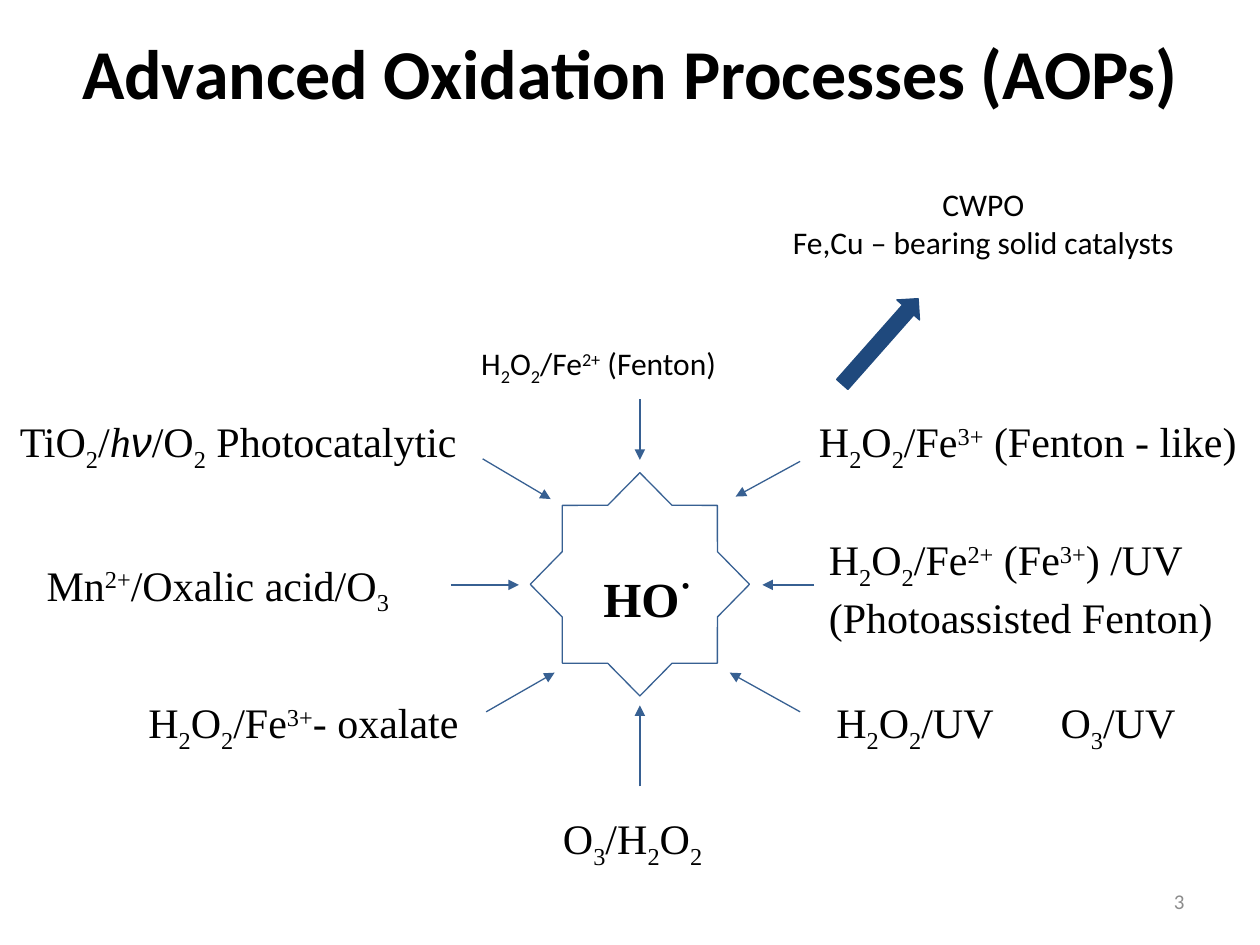
from dataclasses import dataclass

from lxml.etree import SubElement
from pptx import Presentation
from pptx.dml.color import RGBColor
from pptx.enum.shapes import MSO_CONNECTOR, MSO_SHAPE
from pptx.enum.text import MSO_ANCHOR, PP_ALIGN
from pptx.oxml.ns import qn
from pptx.util import Cm, Pt


@dataclass(frozen=True)
class Theme:
    ink: RGBColor = RGBColor(0x00, 0x00, 0x00)
    outline: RGBColor = RGBColor(0x37, 0x60, 0x92)
    accent: RGBColor = RGBColor(0x1F, 0x49, 0x7D)
    muted: RGBColor = RGBColor(0x8C, 0x8C, 0x8C)
    sans: str = "Calibri"
    serif: str = "Times New Roman"
    greek: str = "Arial"
    title: int = 40
    dot: int = 36
    radical: int = 28
    formula: int = 24
    note: int = 18
    number: int = 12
    line: float = 0.75


# Paired marks in a formula: _subscript_, ^superscript^, ~italic~, #Greek italic#
MARKS = "_^~#"
BASELINES = {"_": "-25000", "^": "30000"}


def split_formula(formula):
    """Yield (text, mark) pieces of a marked-up formula."""
    piece, active = "", ""
    for letter in formula:
        if letter in MARKS:
            if piece:
                yield piece, active
            piece, active = "", "" if active == letter else letter
        else:
            piece += letter
    if piece:
        yield piece, active


class SlideBuilder:
    def __init__(self, slide, theme):
        self.slide = slide
        self.theme = theme

    def style(self, font, size, name, color=None, bold=False):
        font.size, font.name, font.bold = Pt(size), name, bold
        font.color.rgb = color or self.theme.ink

    def title(self, text, box):
        heading = self.slide.shapes.title
        heading.left, heading.top, heading.width, heading.height = map(Cm, box)
        frame = heading.text_frame
        frame.text = text
        frame.vertical_anchor = MSO_ANCHOR.MIDDLE
        frame.paragraphs[0].alignment = PP_ALIGN.CENTER
        self.style(frame.paragraphs[0].runs[0].font, self.theme.title,
                   self.theme.sans, bold=True)

    def text_frame(self, box, wrap=True, anchor=MSO_ANCHOR.TOP):
        frame = self.slide.shapes.add_textbox(*map(Cm, box)).text_frame
        frame.word_wrap = wrap
        frame.vertical_anchor = anchor
        return frame

    def text(self, text, box, size, color=None, align=PP_ALIGN.LEFT,
             anchor=MSO_ANCHOR.TOP):
        frame = self.text_frame(box, anchor=anchor)
        frame.text = text
        for paragraph in frame.paragraphs:
            paragraph.alignment = align
            self.style(paragraph.runs[0].font, size, self.theme.sans, color)

    def formula(self, formula, box, size=None, name=None, bold=False,
                align=PP_ALIGN.LEFT, wrap=True):
        theme = self.theme
        paragraph = self.text_frame(box, wrap).paragraphs[0]
        paragraph.alignment = align
        for piece, mark in split_formula(formula):
            run = paragraph.add_run()
            run.text = piece
            face = theme.greek if mark == "#" else name or theme.serif
            self.style(run.font, size or theme.formula, face, bold=bold)
            if mark in BASELINES:
                run.font._element.set("baseline", BASELINES[mark])
            elif mark:
                run.font.italic = True
        return paragraph

    def shape(self, kind, box, color, filled, adjustments, rotation=0):
        shape = self.slide.shapes.add_shape(kind, *map(Cm, box))
        shape.shadow.inherit = False
        shape.rotation = rotation
        for index, value in enumerate(adjustments):
            shape.adjustments[index] = value
        if filled:
            shape.fill.solid()
            shape.fill.fore_color.rgb = color
        else:
            shape.fill.background()
        shape.line.color.rgb = color
        shape.line.width = Pt(self.theme.line)

    def arrow(self, start, end):
        arrow = self.slide.shapes.add_connector(
            MSO_CONNECTOR.STRAIGHT, *map(Cm, start + end))
        arrow.line.color.rgb = self.theme.outline
        arrow.line.width = Pt(self.theme.line)
        SubElement(arrow.line._get_or_add_ln(), qn("a:tailEnd"), type="triangle")
        SubElement(arrow._element.spPr, qn("a:effectLst"))


def main():
    theme = Theme()
    presentation = Presentation()
    presentation.slide_width, presentation.slide_height = Cm(25.4), Cm(19.05)
    title_only = presentation.slide_layouts[5]
    page = SlideBuilder(presentation.slides.add_slide(title_only), theme)

    page.title("Advanced Oxidation Processes (AOPs)", (0, 0.33, 25.4, 2.21))

    # Hydroxyl radical in the centre
    page.shape(MSO_SHAPE.STAR_8_POINT, (10.69, 9.53, 4.42, 4.5),
               theme.outline, False, [0.383])
    radical = page.formula("HO^·^", (11.86, 11.05, 2.39, 1.45), theme.radical,
                           bold=True, align=PP_ALIGN.CENTER, wrap=False)
    radical.runs[-1].font.size = Pt(theme.dot)

    # Arrows pointing to the radical
    for start, end in (
        ((12.9, 15.85), (12.9, 14.22)),
        ((9.8, 14.35), (11.18, 13.56)),
        ((16.13, 14.35), (14.71, 13.56)),
        ((9.73, 9.25), (11.1, 10.06)),
        ((9.09, 11.79), (10.46, 11.79)),
        ((16.41, 11.79), (15.37, 11.79)),
        ((16.13, 9.3), (14.83, 10.01)),
        ((12.9, 8.05), (12.9, 9.27)),
    ):
        page.arrow(start, end)

    # Processes around the radical
    page.formula("H_2_O_2_/Fe^2+^ (Fenton)", (9.45, 6.81, 7.62, 1.27),
                 theme.note, theme.sans)
    upper, lower, row = 8.26, 13.92, 1.27
    for process, box in (
        ("H_2_O_2_/Fe^3+^ (Fenton - like)", (16.26, upper, 9.73, row)),
        ("H_2_O_2_/Fe^2+^ (Fe^3+^) /UV (Photoassisted Fenton)",
         (16.46, 10.64, 8.26, 2.31)),
        ("H_2_O_2_/Fe^3+^- oxalate", (2.74, lower, 6.99, row)),
        ("Mn^2+^/Oxalic acid/O_3_", (0.69, 11.15, 8.81, row)),
        ("TiO_2_/~h~#ν#/O_2_ Photocatalytic", (0.15, upper, 9.96, row)),
        ("O_3_/H_2_O_2_", (11.1, 16.26, 3.61, row)),
        ("O_3_/UV", (21.13, lower, 2.97, row)),
        ("H_2_O_2_/UV", (16.61, lower, 4.01, row)),
    ):
        page.formula(process, box)

    # Catalytic wet peroxide oxidation
    page.text("CWPO\nFe,Cu – bearing solid catalysts",
              (14.25, 3.61, 11.15, 2.31), theme.note, align=PP_ALIGN.CENTER)
    page.shape(MSO_SHAPE.RIGHT_ARROW, (16.59, 6.58, 2.31, 0.61),
               theme.accent, True, [0.5, 0.5], rotation=311.5)

    # Slide number
    page.text("3", (18.21, 17.65, 5.92, 1.02), theme.number, theme.muted,
              PP_ALIGN.RIGHT, MSO_ANCHOR.MIDDLE)

    presentation.save("out.pptx")


if __name__ == "__main__":
    main()
